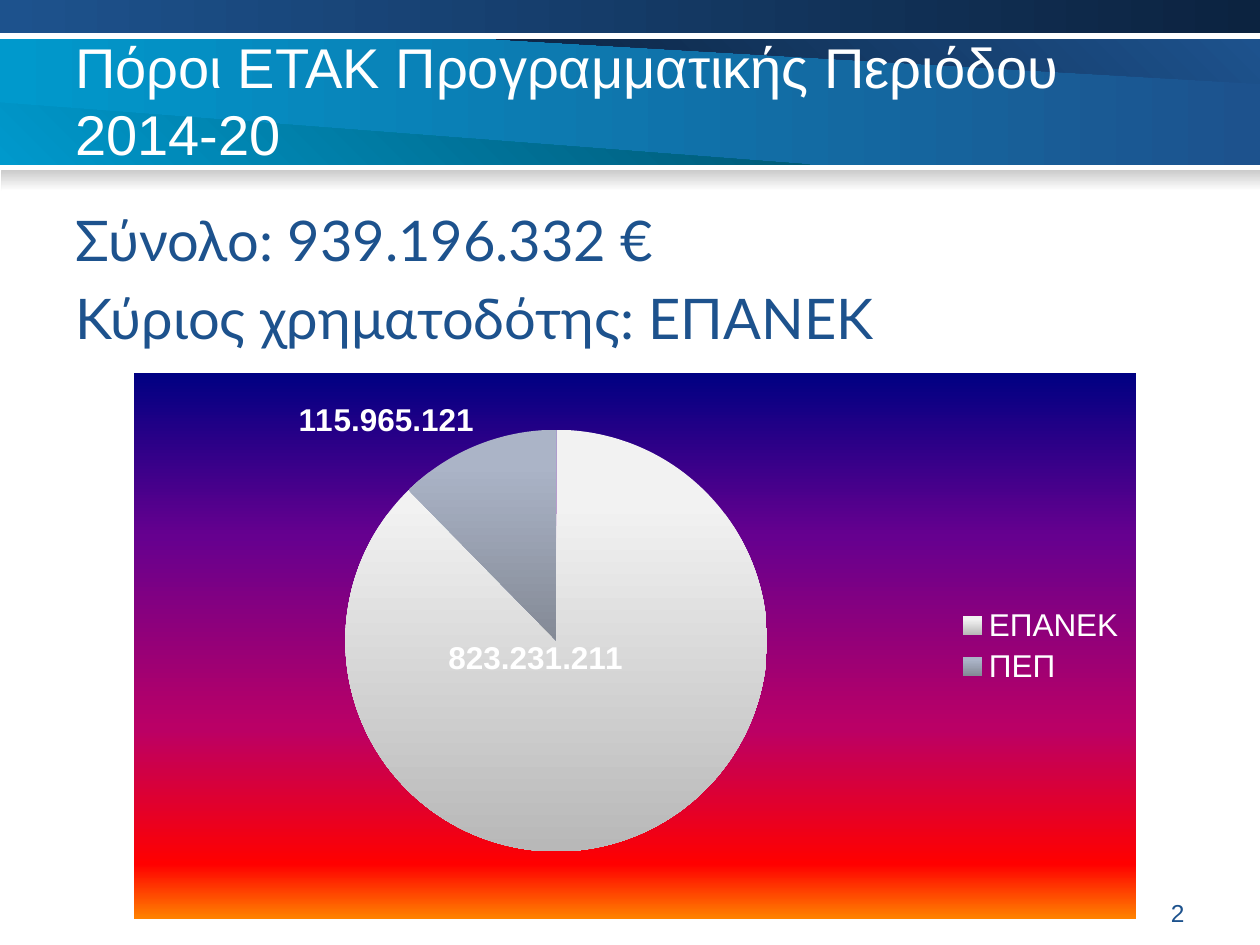
from copy import deepcopy

from lxml.etree import SubElement
from pptx import Presentation
from pptx.chart.data import CategoryChartData
from pptx.dml.color import RGBColor
from pptx.dml.fill import FillFormat
from pptx.enum.chart import XL_CHART_TYPE, XL_LABEL_POSITION, XL_LEGEND_POSITION
from pptx.enum.shapes import MSO_SHAPE
from pptx.enum.text import MSO_ANCHOR, PP_ALIGN
from pptx.oxml import parse_xml
from pptx.oxml.ns import nsdecls, qn
from pptx.util import Cm, Pt

COLOURS = {
    "white": "FFFFFF", "blue": "1D528D", "navy": "0C2340", "cyan": "0099CC",
    "teal": "005672", "grey": "CACACA",
}
BACKDROP = [(0, "000082"), (0.3, "66008F"), (0.65, "BA0066"), (0.9, "FF0000"), (1, "FF8200")]
SLICES = [
    [(0, "F2F2F2"), (0.2, "F0F0F0"), (1, "B8B8B8")],
    [(0, "ABB4C7"), (0.2, "A9B2C5"), (1, "848A96")],
]
LABEL_SHIFTS = [(-0.19, -0.37), None]
NUMBER_FORMAT = r"000\.000\.000"


def colour(name):
    """Return the colour for a palette name."""
    return RGBColor.from_string(COLOURS[name])


def paint_gradient(fill, stops, angle):
    """Fill with a linear gradient whose angle runs clockwise."""
    fill.gradient()
    fill.gradient_angle = (360 - angle) % 360
    first = fill.gradient_stops[0]._gs
    for _ in stops[2:]:
        first.addnext(deepcopy(first))
    for stop, (position, value) in zip(fill.gradient_stops, stops):
        stop.position = position
        stop.color.rgb = RGBColor.from_string(value)


def paint_shape(shape, start, end, angle):
    """Give a shape a two-colour gradient without line or shadow."""
    paint_gradient(shape.fill, [(0, COLOURS[start]), (1, COLOURS[end])], angle)
    shape.line.fill.background()
    shape.shadow.inherit = False


def add_bar(page, box, start, end, angle):
    """Add a gradient rectangle."""
    bar = page.shapes.add_shape(MSO_SHAPE.RECTANGLE, *map(Cm, box))
    paint_shape(bar, start, end, angle)


def add_wedge(page, points, start, end, angle):
    """Add a gradient polygon through the given points."""
    corners = [(Cm(x), Cm(y)) for x, y in points]
    builder = page.shapes.build_freeform(*corners[0])
    builder.add_line_segments(corners[1:], close=True)
    paint_shape(builder.convert_to_shape(), start, end, angle)


def add_text(page, box, lines, size=32, font="Arial", tint="blue", align=PP_ALIGN.LEFT,
             anchor=MSO_ANCHOR.TOP, gap=0, bottom=0.13):
    """Add a wrapped text box with one paragraph for each line."""
    frame = page.shapes.add_textbox(*map(Cm, box)).text_frame
    frame.word_wrap = True
    frame.vertical_anchor = anchor
    frame.margin_bottom = Cm(bottom)
    for index, line in enumerate(lines):
        para = frame.paragraphs[0] if index == 0 else frame.add_paragraph()
        para.alignment = align
        para.space_before = Pt(gap if index else 0)
        span = para.add_run()
        span.text = line
        span.font.size = Pt(size)
        span.font.name = font
        span.font.color.rgb = colour(tint)


def format_font(font, bold=False):
    """Set the white chart font."""
    font.size = Pt(18)
    font.name = "Arial"
    font.bold = bold
    font.color.rgb = colour("white")


def set_layout(element, index, **values):
    """Place a chart part by fractions of the chart area."""
    for old in element.findall(qn("c:layout")):
        element.remove(old)
    layout = parse_xml(f"<c:layout {nsdecls('c')}><c:manualLayout/></c:layout>")
    for name, value in values.items():
        SubElement(layout[0], qn(f"c:{name}")).set("val", str(value))
    element.insert(index, layout)


def add_header(page, box):
    """Draw the banner with its top bar, wedges, shadow strip and title."""
    left, top, width, height = box
    right, bottom = left + width, top + height
    band = top + 0.79
    add_bar(page, (left, band, width, bottom - band), "cyan", "blue", 0)
    add_wedge(page, [(right, band), (left + 10, band), (right, band + 0.9)], "blue", "navy", 135)
    add_wedge(page, [(left, bottom), (left + 16.33, bottom), (left, bottom - 1.25)],
              "cyan", "teal", 315)
    add_bar(page, (left, top, width, 0.66), "blue", "navy", 0)
    add_bar(page, (left + 0.03, bottom + 0.1, width - 0.03, 0.43), "grey", "white", 90)
    add_text(page, (left + 1.27, top + 0.53, width - 2.54, 3.4),
             ["Πόροι ΕΤΑΚ Προγραμματικής Περιόδου 2014-20"],
             tint="white", anchor=MSO_ANCHOR.MIDDLE, bottom=0.58)


def add_funding_chart(page, box):
    """Add the pie of funding by programme."""
    data = CategoryChartData(number_format=NUMBER_FORMAT)
    data.categories = ["ΕΠΑΝΕΚ", "ΠΕΠ"]
    data.add_series("Series 1", (823231211, 115965121))
    chart = page.shapes.add_chart(XL_CHART_TYPE.PIE, *map(Cm, box), data).chart
    chart.has_title = False
    format_font(chart.font)
    area = parse_xml(f"<c:spPr {nsdecls('c', 'a')}><a:ln><a:noFill/></a:ln></c:spPr>")
    chart.element.find(qn("c:chart")).addnext(area)
    paint_gradient(FillFormat.from_fill_parent(area), BACKDROP, 90)

    plot_area = chart.element.find(qn("c:chart")).find(qn("c:plotArea"))
    set_layout(plot_area, 0, layoutTarget="inner", xMode="edge", yMode="edge",
               x=0.083, y=0.104, w=0.677, h=0.773)
    chart.has_legend = True
    legend = chart.legend
    legend.position = XL_LEGEND_POSITION.RIGHT
    legend.include_in_layout = False
    format_font(legend.font)
    set_layout(legend._element, 1, xMode="edge", yMode="edge", x=0.82, y=0.42, w=0.17, h=0.16)

    plot = chart.plots[0]
    plot.vary_by_categories = True
    series = plot.series[0]
    labels = series.data_labels
    labels.show_value = True
    labels.number_format = NUMBER_FORMAT
    labels.number_format_is_linked = False
    format_font(labels.font, bold=True)
    for index, (stops, shift) in enumerate(zip(SLICES, LABEL_SHIFTS)):
        point = series.points[index]
        paint_gradient(point.format.fill, stops, 90)
        point.format.line.fill.background()
        format_font(point.data_label.font, bold=True)
        point.data_label.position = XL_LABEL_POSITION.OUTSIDE_END
        label = labels._element.findall(qn("c:dLbl"))[index]
        label.find(qn("c:txPr")).find(qn("a:bodyPr")).set("wrap", "none")
        label.insert(1, parse_xml(
            f'<c:numFmt {nsdecls("c")} formatCode="{NUMBER_FORMAT}" sourceLinked="0"/>'))
        if shift:
            set_layout(label, 1, x=shift[0], y=shift[1])


def build_funding_slide(deck):
    """Build the slide on funding for the programming period."""
    page = deck.slides.add_slide(deck.slide_layouts[6])
    add_header(page, (0, 0, 25.4, 3.32))
    add_text(page, (1.27, 4.01, 22.86, 13.74),
             ["Σύνολο: 939.196.332 €", "Κύριος χρηματοδότης: ΕΠΑΝΕΚ"], font="Lato", gap=6.4)
    add_text(page, (18.21, 17.98, 5.92, 0.69), ["2"], size=14, align=PP_ALIGN.RIGHT)
    add_funding_chart(page, (2.7, 7.52, 20.2, 11))


def main():
    """Create and save the deck."""
    deck = Presentation()
    deck.slide_width, deck.slide_height = Cm(25.4), Cm(19.05)
    build_funding_slide(deck)
    deck.save("out.pptx")


if __name__ == "__main__":
    main()
